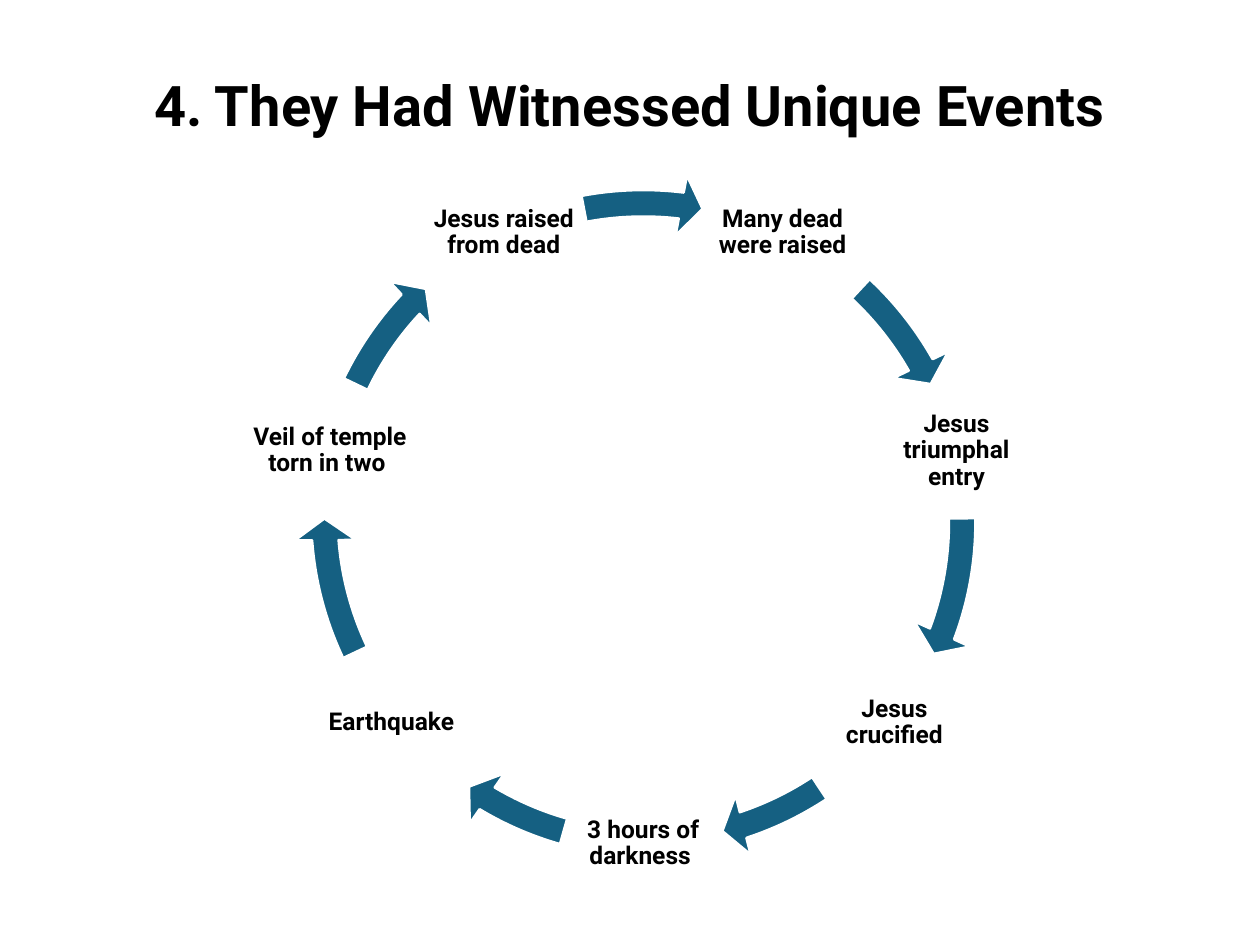
import math

from pptx import Presentation
from pptx.dml.color import RGBColor
from pptx.enum.shapes import MSO_SHAPE
from pptx.enum.text import MSO_ANCHOR, MSO_AUTO_SIZE, PP_ALIGN
from pptx.util import Pt

CIRCULAR_ARROW = MSO_SHAPE.CIRCULAR_ARROW
MIDDLE = MSO_ANCHOR.MIDDLE
NO_AUTOFIT = MSO_AUTO_SIZE.NONE
CENTER = PP_ALIGN.CENTER

TITLE_BOX = (49.7, 28.8, 620.6, 66.2)
CYCLE_BOX = (167.8, 98.6, 399.6, 399.6)
LABEL_RADIUS = 183.6
LABEL_HEIGHT = 77
ADJUSTMENT_PER_DEGREE = 0.6

# Label, label width, label shift, arrow start and end in degrees, arrow shift
EVENTS = [
    ("Many dead were raised", 90.7, 0, 312.97, 330.44, (0, 0)),
    ("Jesus triumphal entry", 77, 0, 359.3, 20.5, (0, 0)),
    ("Jesus crucified", 90.7, 0, 56.48, 71.75, (0, 0)),
    ("3 hours of darkness ", 90.7, 0, 105.86, 120.86, (4.3, 1.4)),
    ("Earthquake ", 90.7, 1.4, 154.64, 175.62, (0, -3.6)),
    ("Veil of temple torn in two ", 90.7, 0, 205.64, 223.12, (0, 0)),
    ("Jesus raised from dead", 90.7, 0, 259.27, 276.82, (0, 0)),
]


def color(hex_string):
    return RGBColor.from_string(hex_string)


def write_text(shape, text, size):
    frame = shape.text_frame
    frame_format = {"word_wrap": True, "auto_size": NO_AUTOFIT,
                    "vertical_anchor": MIDDLE}
    for name, value in frame_format.items():
        setattr(frame, name, value)
    paragraph = frame.paragraphs[0]
    paragraph.text = text
    paragraph.alignment = CENTER
    paragraph.line_spacing = 0.9
    font_format = {"name": "Roboto", "size": Pt(size), "bold": True}
    for name, value in font_format.items():
        setattr(paragraph.font, name, value)
    paragraph.font.color.rgb = color("000000")


def place_title(slide, box, text):
    title = slide.shapes.title
    title.left, title.top, title.width, title.height = map(Pt, box)
    write_text(title, text, 32)


def add_label(shapes, box, text):
    label = shapes.add_textbox(*map(Pt, box))
    for side in ("left", "top", "right", "bottom"):
        setattr(label.text_frame, f"margin_{side}", Pt(1.4))
    write_text(label, text, 14)


def add_arrow(shapes, box, start, end):
    arrow = shapes.add_shape(CIRCULAR_ARROW, *map(Pt, box))
    # Band thickness, head angle, end angle, start angle, head half-width
    values = (0.038, 2.349, end * ADJUSTMENT_PER_DEGREE,
              start * ADJUSTMENT_PER_DEGREE, 0.044)
    for index, value in enumerate(values):
        arrow.adjustments[index] = value
    arrow.shadow.inherit = False
    arrow.fill.solid()
    arrow.fill.fore_color.rgb = color("156082")
    arrow.line.color.rgb = color("FFFFFF")
    arrow.line.width = Pt(1.5)


def add_cycle(slide, box, events):
    left, top, width, height = box
    center_x, center_y = left + width / 2, top + height / 2
    shapes = slide.shapes.add_group_shape().shapes
    step = 2 * math.pi / len(events)
    for index, event in enumerate(events):
        text, label_width, label_shift, start, end, (shift_x, shift_y) = event
        # The middle event sits at the bottom of the circle
        angle = math.pi / 2 + (index - len(events) // 2) * step
        x = center_x + LABEL_RADIUS * math.cos(angle) + label_shift
        y = center_y + LABEL_RADIUS * math.sin(angle)
        add_label(shapes, (x - label_width / 2, y - LABEL_HEIGHT / 2,
                           label_width, LABEL_HEIGHT), text)
        add_arrow(shapes, (left + shift_x, top + shift_y, width, height),
                  start, end)


def main():
    presentation = Presentation()
    presentation.slide_width, presentation.slide_height = Pt(720), Pt(540)
    slide = presentation.slides.add_slide(presentation.slide_layouts[5])
    place_title(slide, TITLE_BOX, "4. They Had Witnessed Unique Events")
    add_cycle(slide, CYCLE_BOX, EVENTS)
    presentation.save("out.pptx")


if __name__ == "__main__":
    main()
